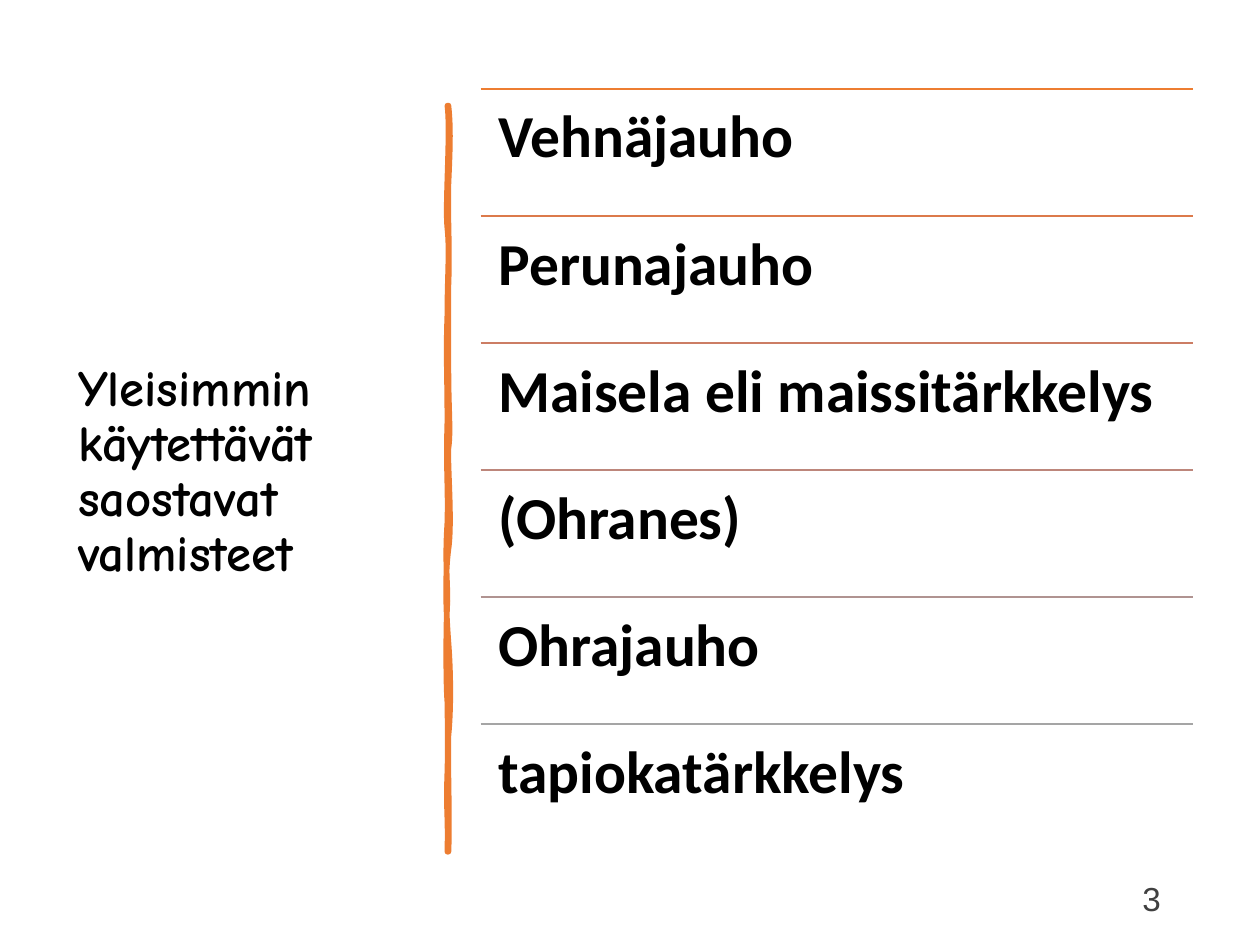
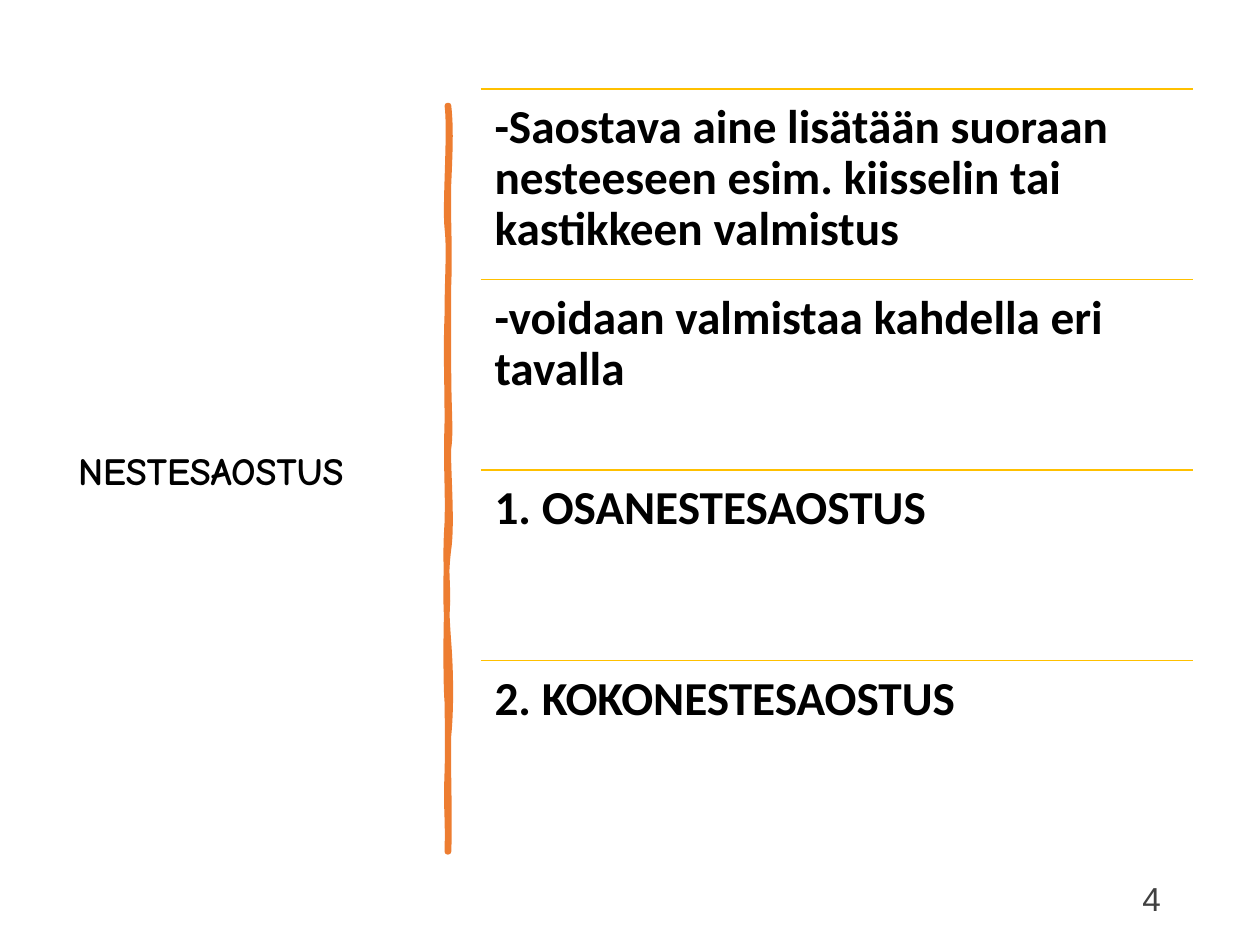
from dataclasses import dataclass

from lxml.etree import SubElement
from pptx import Presentation
from pptx.dml.color import RGBColor
from pptx.enum.shapes import MSO_CONNECTOR
from pptx.enum.text import MSO_ANCHOR, MSO_AUTO_SIZE, PP_ALIGN
from pptx.oxml.ns import qn
from pptx.util import Cm, Pt


@dataclass(frozen=True)
class Theme:
    ink: str = "000000"
    number_ink: str = "404040"
    brush: str = "ED7D31"
    fade: tuple = ("ED7D31", "DC7A4B", "CC7D64", "BD867B", "B09391", "A5A5A5")
    gold: str = "FFC000"
    title_font: str = "Comic Neue"
    row_font: str = "Calibri"
    number_font: str = "Arial"
    long_title: int = 29
    short_title: int = 22
    large_row: int = 34
    small_row: int = 27
    number: int = 19
    rule: float = 1
    brush_line: float = 3.25


THEME = Theme()

ROWS_LEFT, ROWS_TOP, ROWS_WIDTH, ROWS_HEIGHT = 9.69, 1.79, 14.36, 15.37

BRUSH_START = (9.04, 2.13)
BRUSH_CURVES = (
    ((9.09, 2.59), (9.07, 3.02), (9.04, 3.71)),
    ((9.02, 4.39), (9.07, 4.95), (9.04, 5.74)),
    ((9.04, 6.53), (9.04, 6.65), (9.04, 7.47)),
    ((9.04, 8.26), (9.09, 8.69), (9.04, 9.04)),
    ((9.02, 9.4), (9.12, 10.52), (9.04, 11.07)),
    ((8.97, 11.61), (8.99, 12.29), (9.04, 12.95)),
    ((9.09, 13.61), (9.09, 14.33), (9.04, 14.83)),
    ((9.02, 15.32), (9.07, 16.51), (9.04, 17.17)),
    ((9.04, 17.17), (9.02, 17.17), (9.02, 17.17)),
    ((9.04, 16.41), (8.99, 16.36), (9.02, 15.57)),
    ((9.04, 14.81), (9.02, 14.48), (9.02, 14.15)),
    ((8.99, 13.82), (8.99, 12.57), (9.02, 12.12)),
    ((9.02, 11.66), (8.97, 11.3), (9.02, 10.54)),
    ((9.04, 9.8), (8.99, 9.47), (9.02, 8.51)),
    ((9.02, 7.57), (8.99, 7.14), (9.02, 6.35)),
    ((9.02, 5.54), (9.07, 5.08), (9.02, 4.6)),
    ((8.97, 4.14), (9.09, 2.64), (9.02, 2.13)),
)

PAGES = (
    {
        "number": 3,
        "title": "Yleisimmin käytettävät saostavat valmisteet",
        "title_size": THEME.long_title,
        "row_size": THEME.large_row,
        "inset": 0.36,
        "colours": THEME.fade,
        "rows": (
            "Vehnäjauho",
            "Perunajauho",
            "Maisela eli maissitärkkelys",
            "(Ohranes)",
            "Ohrajauho",
            "tapiokatärkkelys",
        ),
    },
    {
        "number": 4,
        "title": "NESTESAOSTUS",
        "title_size": THEME.short_title,
        "row_size": THEME.small_row,
        "inset": 0.28,
        "colours": (THEME.gold,) * 4,
        "rows": (
            "-Saostava aine lisätään suoraan nesteeseen esim. kiisselin tai kastikkeen valmistus",
            "-voidaan valmistaa kahdella eri tavalla",
            "1. OSANESTESAOSTUS",
            "2. KOKONESTESAOSTUS",
        ),
    },
)


def set_all(target, values):
    for name, value in values.items():
        setattr(target, name, value)


def write(shape, text, font, size, colour, bold=True, align=PP_ALIGN.LEFT,
          anchor=MSO_ANCHOR.TOP, inset=None):
    frame = shape.text_frame
    set_all(frame, {"word_wrap": True, "auto_size": MSO_AUTO_SIZE.NONE,
                    "vertical_anchor": anchor})
    if inset is not None:
        sides = ("left", "top", "right", "bottom")
        set_all(frame, {f"margin_{side}": Cm(inset) for side in sides})
    para = frame.paragraphs[0]
    set_all(para, {"alignment": align, "line_spacing": 0.9})
    span = para.add_run()
    span.text = text
    set_all(span.font, {"name": font, "size": Pt(size), "bold": bold})
    span.font.color.rgb = RGBColor.from_string(colour)


def add_title(page, text, size):
    title = page.shapes.title
    set_all(title, {"left": Cm(1.32), "top": Cm(1.77),
                    "width": Cm(7.11), "height": Cm(15.52)})
    write(title, text, THEME.title_font, size, THEME.ink, anchor=MSO_ANCHOR.MIDDLE)


def bend_segments(shape, curves):
    segments = list(shape._element.iter(qn("a:lnTo")))
    for segment, curve in zip(segments, curves):
        segment.tag = qn("a:cubicBezTo")
        for child in list(segment):
            segment.remove(child)
        for x, y in curve:
            SubElement(segment, qn("a:pt"), x=str(Cm(x) - shape.left),
                       y=str(Cm(y) - shape.top))


def add_brush_stroke(page):
    left, top = BRUSH_START
    builder = page.shapes.build_freeform(Cm(left), Cm(top))
    ends = [(Cm(x), Cm(y)) for _, _, (x, y) in BRUSH_CURVES]
    builder.add_line_segments(ends, close=True)
    stroke = builder.convert_to_shape()
    bend_segments(stroke, BRUSH_CURVES)
    stroke.shadow.inherit = False
    colour = RGBColor.from_string(THEME.brush)
    stroke.fill.solid()
    stroke.fill.fore_color.rgb = colour
    stroke.line.color.rgb = colour
    stroke.line.width = Pt(THEME.brush_line)
    outline = stroke.line._get_or_add_ln()
    outline.set("cap", "rnd")
    SubElement(outline, qn("a:round"))


def add_number(page, number):
    box = page.shapes.add_textbox(Cm(17.93), Cm(17.65), Cm(5.72), Cm(1.02))
    write(box, str(number), THEME.number_font, THEME.number, THEME.number_ink,
          bold=False, align=PP_ALIGN.RIGHT, anchor=MSO_ANCHOR.MIDDLE)


def add_rule(page, top, colour):
    rule = page.shapes.add_connector(
        MSO_CONNECTOR.STRAIGHT, Cm(ROWS_LEFT), Cm(top),
        Cm(ROWS_LEFT + ROWS_WIDTH), Cm(top))
    rule.line.color.rgb = RGBColor.from_string(colour)
    rule.line.width = Pt(THEME.rule)
    SubElement(rule._element.spPr, qn("a:effectLst"))


def add_rows(page, rows, colours, size, inset):
    height = ROWS_HEIGHT / len(rows)
    for index, (text, colour) in enumerate(zip(rows, colours)):
        top = ROWS_TOP + index * height
        add_rule(page, top, colour)
        box = page.shapes.add_textbox(Cm(ROWS_LEFT), Cm(top), Cm(ROWS_WIDTH), Cm(height))
        write(box, text, THEME.row_font, size, THEME.ink, inset=inset)


def main():
    deck = Presentation()
    set_all(deck, {"slide_width": Cm(25.4), "slide_height": Cm(19.05)})
    title_only = deck.slide_layouts.get_by_name("Title Only")
    for content in PAGES:
        page = deck.slides.add_slide(title_only)
        add_title(page, content["title"], content["title_size"])
        add_brush_stroke(page)
        add_number(page, content["number"])
        add_rows(page, content["rows"], content["colours"],
                 content["row_size"], content["inset"])
    deck.save("out.pptx")


if __name__ == "__main__":
    main()
